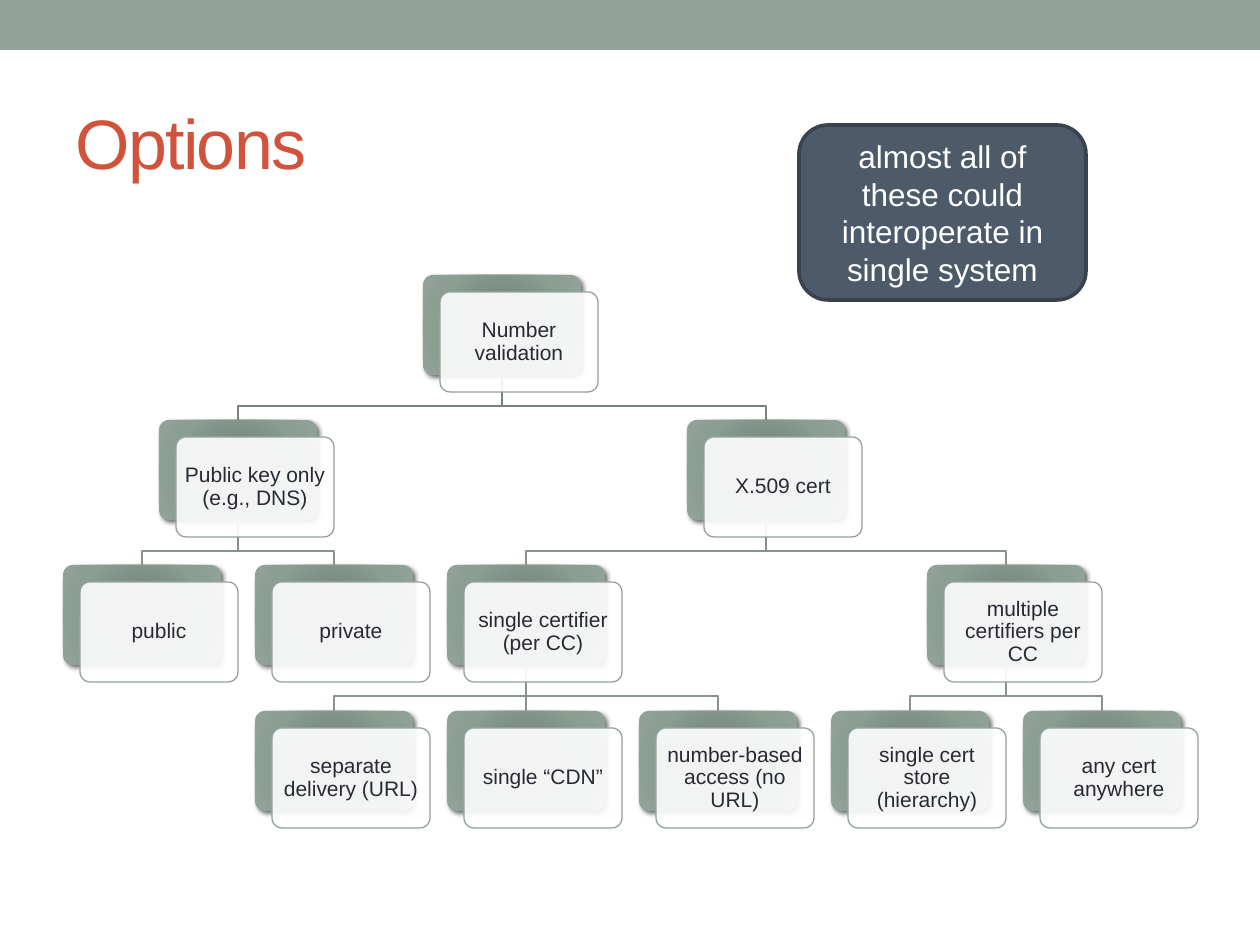
from dataclasses import dataclass
from typing import Iterator

from lxml import etree
from pptx import Presentation
from pptx.dml.color import RGBColor
from pptx.enum.shapes import MSO_CONNECTOR, MSO_SHAPE
from pptx.enum.text import MSO_ANCHOR, PP_ALIGN
from pptx.oxml import parse_xml
from pptx.oxml.ns import nsdecls, qn
from pptx.util import Emu, Pt

ROUNDED = MSO_SHAPE.ROUNDED_RECTANGLE
CALLOUT = MSO_SHAPE.FLOWCHART_ALTERNATE_PROCESS
RECTANGLE = MSO_SHAPE.RECTANGLE
STRAIGHT = MSO_CONNECTOR.STRAIGHT
MIDDLE = MSO_ANCHOR.MIDDLE
LEFT, CENTER = PP_ALIGN.LEFT, PP_ALIGN.CENTER
BOTTOM_SITE, TOP_SITE = 2, 0

SCALE = 914400 / 126  # EMU per px
FONT = "Arial"
COLORS = {
    "sage": "93A299",
    "title": "D2533C",
    "text": "292934",
    "white": "FFFFFF",
    "callout": "4C5A6A",
    "callout_line": "38434E",
    "top_link": "76827B",
    "link": "85938B",
}
CARD_GRADIENT = ((0, "7B8E82"), (34, "7B8D83"), (70, "8A9E92"), (100, "93A299"))

# Tree grid, in px
TREE_LEFT, TREE_TOP = 63, 275
COLUMN_STEP = 192
THREE_LEVELS = 436
CARD_WIDTH, CARD_HEIGHT = 158, 100
CARD_OFFSET = 17
BEND_DROP = 31


@dataclass
class Box:
    left: int
    top: int
    width: int
    height: int


@dataclass
class Node:
    label: str
    leaf_column: int = 0
    children: tuple["Node", ...] = ()

    @property
    def column(self) -> float:
        """A parent sits midway between its first and last child."""
        if not self.children:
            return self.leaf_column
        return (self.children[0].column + self.children[-1].column) / 2


@dataclass
class Card:
    node: Node
    level: int
    box: Box
    back: object

    @property
    def center(self) -> int:
        return self.box.left + self.box.width // 2


TREE = Node("Number validation", children=(
    Node("Public key only (e.g., DNS)", children=(
        Node("public", 0),
        Node("private", 1),
    )),
    Node("X.509 cert", children=(
        Node("single certifier (per CC)", children=(
            Node("separate delivery (URL)", 1),
            Node("single “CDN”", 2),
            Node("number-based access (no URL)", 3),
        )),
        Node("multiple certifiers per CC", children=(
            Node("single cert store (hierarchy)", 4),
            Node("any cert anywhere", 5),
        )),
    )),
))


def px(length: int) -> Emu:
    return Emu(round(length * SCALE))


def color(name: str) -> RGBColor:
    return RGBColor.from_string(COLORS[name])


def add_box(slide, kind, box: Box, fill: str | None = None,
            line: str | None = None, line_width: float = 0.75):
    shape = slide.shapes.add_shape(
        kind, px(box.left), px(box.top), px(box.width), px(box.height))
    shape.shadow.inherit = False
    if fill:
        shape.fill.solid()
        shape.fill.fore_color.rgb = color(fill)
    else:
        shape.fill.background()
    if line:
        shape.line.color.rgb = color(line)
        shape.line.width = Pt(line_width)
    else:
        shape.line.fill.background()
    return shape


def set_text(shape, text: str, size: int, color_name: str, alignment=CENTER):
    frame = shape.text_frame
    frame.text = text
    frame.word_wrap = True
    frame.vertical_anchor = MIDDLE
    paragraph = frame.paragraphs[0]
    paragraph.alignment = alignment
    font = paragraph.runs[0].font
    font.name, font.size = FONT, Pt(size)
    font.color.rgb = color(color_name)
    return paragraph


def add_back(slide, box: Box):
    """Shaded card with a radial gradient and a soft shadow."""
    shape = add_box(slide, ROUNDED, box)
    shape.adjustments[0] = 0.1
    properties = shape.element.spPr
    stops = "".join(
        f'<a:gs pos="{position * 1000}"><a:srgbClr val="{value}"/></a:gs>'
        for position, value in CARD_GRADIENT)
    gradient = parse_xml(
        f'<a:gradFill {nsdecls("a")}><a:gsLst>{stops}</a:gsLst><a:path path="circle">'
        '<a:fillToRect l="100000" t="100000" r="100000" b="100000"/>'
        '</a:path></a:gradFill>')
    properties.replace(properties.find(qn("a:noFill")), gradient)
    properties.find(qn("a:effectLst")).append(parse_xml(
        f'<a:outerShdw {nsdecls("a")} blurRad="38100" dist="25400" dir="2700000">'
        '<a:srgbClr val="000000"><a:alpha val="60000"/></a:srgbClr></a:outerShdw>'))
    return shape


def add_cards(slide, node: Node, level: int = 0) -> Iterator[Card]:
    box = Box(TREE_LEFT + round(node.column * COLUMN_STEP),
              TREE_TOP + level * THREE_LEVELS // 3, CARD_WIDTH, CARD_HEIGHT)
    yield Card(node, level, box, add_back(slide, box))
    for child in node.children:
        yield from add_cards(slide, child, level + 1)


def add_link(slide, parent: Card, child: Card) -> None:
    start = parent.box.top + CARD_HEIGHT
    if parent.center == child.center:
        link = slide.shapes.add_connector(STRAIGHT, 0, 0, 0, 0)
        link.begin_connect(parent.back, BOTTOM_SITE)
        link.end_connect(child.back, TOP_SITE)
        etree.SubElement(link.element.spPr, qn("a:effectLst"))
    else:
        bend = start + BEND_DROP
        builder = slide.shapes.build_freeform(parent.center, start, scale=SCALE)
        builder.add_line_segments(
            [(parent.center, bend), (child.center, bend),
             (child.center, child.box.top)], close=False)
        link = builder.convert_to_shape()
        link.fill.background()
        link.shadow.inherit = False
    link.line.color.rgb = color("link" if parent.level else "top_link")
    link.line.width = Pt(0.75)


def add_front(slide, card: Card) -> None:
    """Translucent white card that carries the label."""
    box = Box(card.box.left + CARD_OFFSET, card.box.top + CARD_OFFSET,
              CARD_WIDTH, CARD_HEIGHT)
    shape = add_box(slide, ROUNDED, box, "white", "sage")
    shape.adjustments[0] = 0.1
    fill_color = shape.element.spPr.find(qn("a:solidFill")).find(qn("a:srgbClr"))
    etree.SubElement(fill_color, qn("a:alpha"), val="90000")
    frame = shape.text_frame
    frame.margin_left = frame.margin_right = px(6)
    frame.margin_top = frame.margin_bottom = px(6)
    set_text(shape, card.node.label, 12, "text").line_spacing = 0.9


def main() -> None:
    presentation = Presentation()
    presentation.slide_width, presentation.slide_height = px(1260), px(945)
    slide = presentation.slides.add_slide(presentation.slide_layouts[5])

    # Top band and title
    add_box(slide, RECTANGLE, Box(0, 0, 1260, 50), "sage")
    title = slide.shapes.title
    title.left, title.top, title.width, title.height = px(63), px(73), px(1134), px(136)
    heading = set_text(title, "Options", 40, "title", LEFT)
    heading.runs[0].font._element.set("spc", "-100")

    # Tree: shaded cards, then links, then labelled cards
    cards = list(add_cards(slide, TREE))
    for parent in cards:
        for child in cards:
            if any(child.node is node for node in parent.node.children):
                add_link(slide, parent, child)
    for card in cards:
        add_front(slide, card)

    # Callout
    callout = add_box(slide, CALLOUT, Box(799, 125, 287, 175),
                      "callout", "callout_line", 2.08)
    set_text(callout, "almost all of these could interoperate in single system",
             18, "white")

    presentation.save("out.pptx")


if __name__ == "__main__":
    main()
